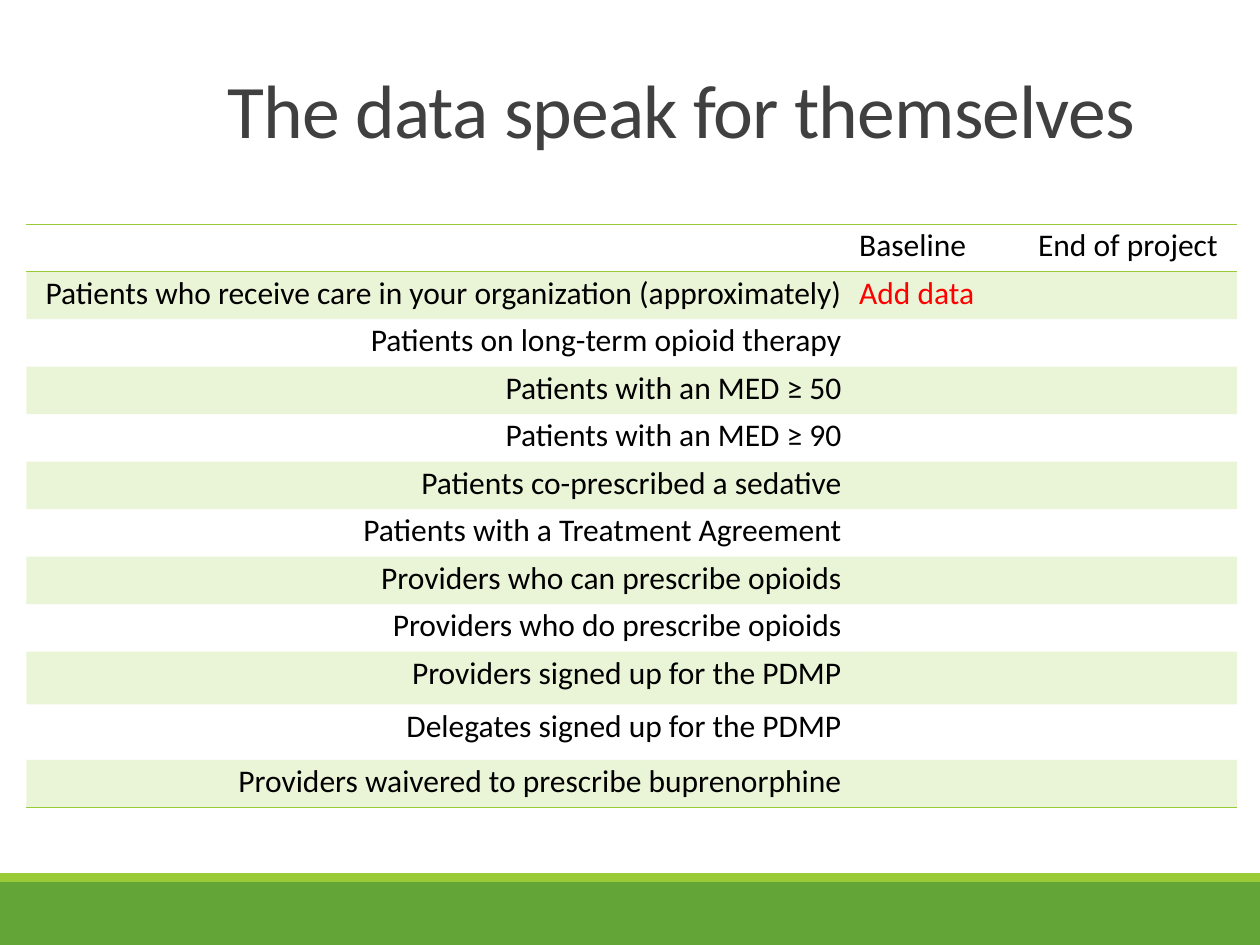
from dataclasses import dataclass

from lxml import etree
from pptx import Presentation
from pptx.dml.color import RGBColor
from pptx.enum import shapes, text
from pptx.oxml.ns import qn
from pptx.util import Inches, Pt

COLORS = {
    "green": "63A537",
    "lime": "99CB38",
    "title": "404040",
    "body": "000000",
    "prompt": "FF0000",
}
FONT = "Calibri"
PLAIN_TABLE_STYLE = "{2D5ABB26-0587-4C30-8999-92F81FD0307C}"
COLUMN_WIDTHS = (6.54, 1.42, 1.65)
TABLE_HEIGHT = 4.63
TALL_ROWS = {9: 0.42, 10: 0.44}
HEADINGS = ("", "Baseline", "End of project")
MEASURES = (
    "Patients who receive care in your organization (approximately)",
    "Patients on long-term opioid therapy",
    "Patients with an MED ≥ 50",
    "Patients with an MED ≥ 90",
    "Patients co-prescribed a sedative",
    "Patients with a Treatment Agreement",
    "Providers who can prescribe opioids",
    "Providers who do prescribe opioids",
    "Providers signed up for the PDMP",
    "Delegates signed up for the PDMP",
    "Providers waivered to prescribe buprenorphine",
)


@dataclass(frozen=True)
class Band:
    top: float
    height: float
    color: str


FOOTER_BANDS = (Band(7, 0.5, "green"), Band(6.93, 0.07, "lime"))


def rgb(color: str) -> RGBColor:
    return RGBColor.from_string(COLORS[color])


def style_font(paragraph, size: float, color: str) -> None:
    font = paragraph.font
    font.name = FONT
    font.size = Pt(size)
    font.color.rgb = rgb(color)


def draw_band(slide, band: Band) -> None:
    strip = slide.shapes.add_shape(
        shapes.MSO_SHAPE.RECTANGLE,
        Inches(0), Inches(band.top), Inches(10), Inches(band.height),
    )
    strip.shadow.inherit = False
    strip.fill.solid()
    strip.fill.fore_color.rgb = rgb(band.color)
    strip.line.fill.background()


def draw_title(slide, wording: str) -> None:
    title = slide.shapes.add_textbox(
        Inches(1.71), Inches(0.29), Inches(8.1), Inches(0.98)
    ).text_frame
    title.word_wrap = True
    title.vertical_anchor = text.MSO_ANCHOR.BOTTOM
    heading = title.paragraphs[0]
    heading.line_spacing = 0.85
    run = heading.add_run()
    run.text = wording
    run._r.get_or_add_rPr().set("spc", "-50")
    style_font(heading, 43.2, "title")


def add_border(cell, side: str) -> None:
    border = etree.SubElement(
        cell._tc.get_or_add_tcPr(), qn(f"a:ln{side}"), w=str(Pt(1))
    )
    fill = etree.SubElement(border, qn("a:solidFill"))
    etree.SubElement(fill, qn("a:srgbClr"), val=COLORS["lime"])


def tint_cell(cell) -> None:
    cell.fill.solid()
    cell.fill.fore_color.rgb = rgb("lime")
    tint = cell._tc.tcPr.find(f"{qn('a:solidFill')}/{qn('a:srgbClr')}")
    etree.SubElement(tint, qn("a:alpha"), val="20000")


def fill_cell(cell, wording: str, color: str, borders: str,
              tinted: bool, right: bool) -> None:
    cell.margin_left = cell.margin_right = Inches(0.07)
    cell.margin_top = cell.margin_bottom = Inches(0)
    entry = cell.text_frame.paragraphs[0]
    if wording:
        entry.text = wording
        entry.line_spacing = 1.07
        entry.space_after = Pt(6)
    if right:
        entry.alignment = text.PP_ALIGN.RIGHT
    style_font(entry, 18, color)
    for side in borders:
        add_border(cell, side)
    if tinted:
        tint_cell(cell)
    else:
        cell.fill.background()


def draw_measures(slide) -> None:
    rows = [HEADINGS] + [(measure, "", "") for measure in MEASURES]
    rows[1] = (MEASURES[0], "Add data", "")
    table = slide.shapes.add_table(
        len(rows), len(COLUMN_WIDTHS),
        Inches(0.21), Inches(1.78), Inches(9.6), Inches(TABLE_HEIGHT),
    ).table
    table.first_row = table.horz_banding = False
    table._tbl.tblPr.find(qn("a:tableStyleId")).text = PLAIN_TABLE_STYLE
    for column, width in zip(table.columns, COLUMN_WIDTHS):
        column.width = Inches(width)
    regular = (TABLE_HEIGHT - sum(TALL_ROWS.values())) / (len(rows) - len(TALL_ROWS))
    borders = {0: "TB", len(rows) - 1: "B"}
    for r, row in enumerate(rows):
        table.rows[r].height = Inches(TALL_ROWS.get(r, regular))
        for c, wording in enumerate(row):
            color = "prompt" if r == 1 and c == 1 else "body"
            fill_cell(table.cell(r, c), wording, color, borders.get(r, ""),
                      tinted=r % 2 == 1, right=r > 0 and c == 0)


def main() -> None:
    deck = Presentation()
    deck.slide_width, deck.slide_height = Inches(10), Inches(7.5)
    slide = deck.slides.add_slide(deck.slide_layouts[6])
    for band in FOOTER_BANDS:
        draw_band(slide, band)
    draw_title(slide, "The data speak for themselves")
    draw_measures(slide)
    deck.save("out.pptx")


if __name__ == "__main__":
    main()
